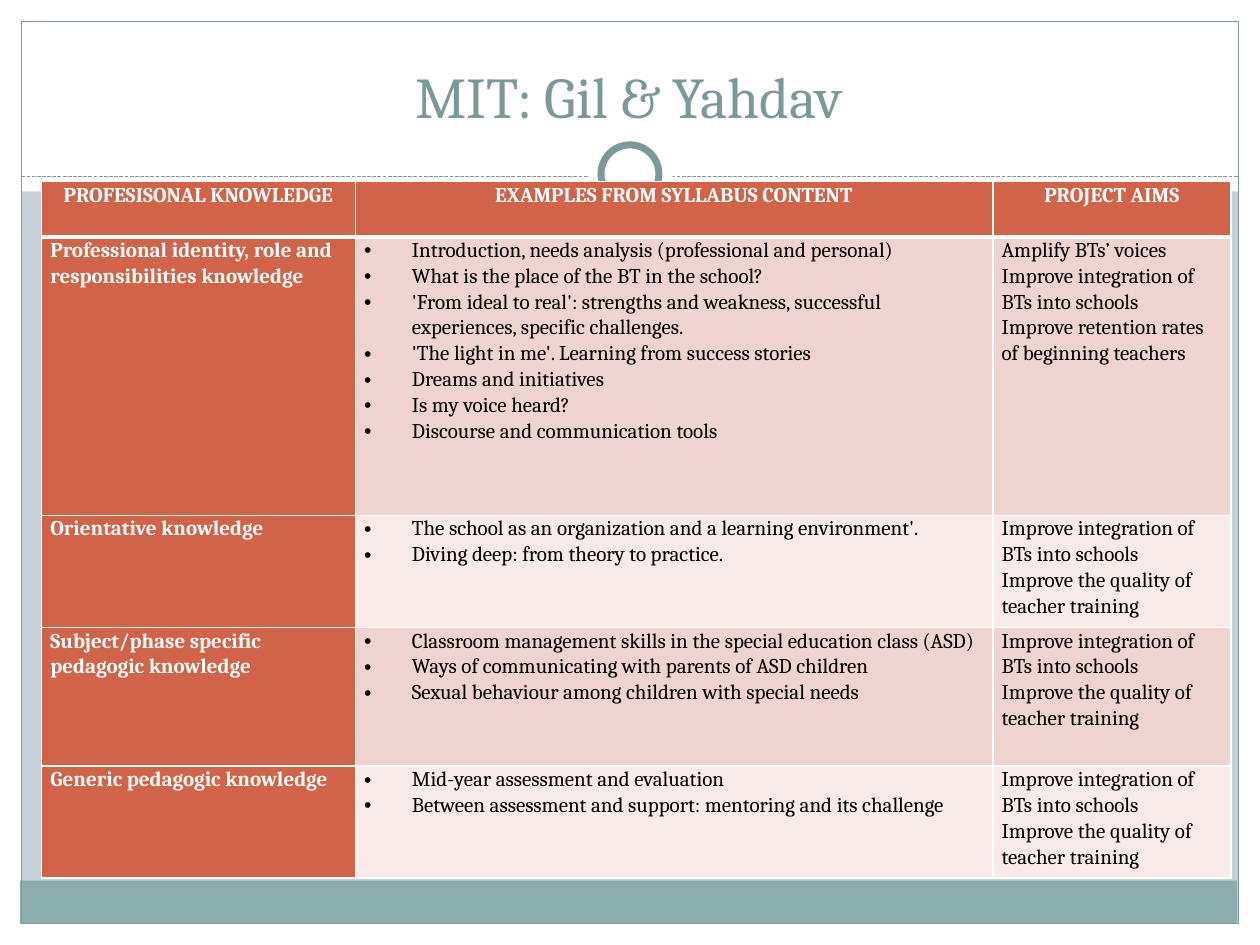
from typing import NamedTuple, Optional

from lxml import etree
from pptx import Presentation
from pptx.dml.color import RGBColor
from pptx.enum.dml import MSO_LINE
from pptx.enum.shapes import MSO_CONNECTOR, MSO_SHAPE
from pptx.enum.text import MSO_ANCHOR, MSO_AUTO_SIZE, PP_ALIGN
from pptx.oxml.ns import qn
from pptx.util import Inches, Pt

RECTANGLE, OVAL = MSO_SHAPE.RECTANGLE, MSO_SHAPE.OVAL
STRAIGHT = MSO_CONNECTOR.STRAIGHT
DASHED = MSO_LINE.SQUARE_DOT
CENTER, LEFT = PP_ALIGN.CENTER, PP_ALIGN.LEFT

WHITE = RGBColor(0xFF, 0xFF, 0xFF)
BLACK = RGBColor(0x00, 0x00, 0x00)
BACKDROP = RGBColor(0xC5, 0xD1, 0xD7)
FOOTER_TEAL = RGBColor(0x8C, 0xAD, 0xAE)
TEAL = RGBColor(0x7C, 0x99, 0x9A)
ORANGE = RGBColor(0xD1, 0x63, 0x49)
ROW_TINTS = (RGBColor(0xEE, 0xD3, 0xD0), RGBColor(0xF7, 0xEA, 0xE9))
FONT = "Cambria"
BULLET_INDENT = Inches(0.38)


class Decoration(NamedTuple):
    kind: MSO_SHAPE
    left: float
    top: float
    width: float
    height: float
    fill: Optional[RGBColor] = None
    line_width: float = 0


class KnowledgeArea(NamedTuple):
    name: str
    examples: list[str]
    aims: list[str]
    height: float


DECORATIONS = [
    Decoration(RECTANGLE, 0, 7.33, 10, 0.17, WHITE),
    Decoration(RECTANGLE, 0, 0, 10, 1.52, WHITE),
    Decoration(RECTANGLE, 0, 0, 0.17, 7.5, WHITE),
    Decoration(RECTANGLE, 9.83, 0, 0.17, 7.5, WHITE),
    Decoration(RECTANGLE, 0.16, 6.99, 9.66, 0.34, FOOTER_TEAL),
    Decoration(RECTANGLE, 0.17, 0.17, 9.66, 7.16, None, 0.75),
]
RING = [
    Decoration(OVAL, 4.67, 1.05, 0.67, 0.67, WHITE),
    Decoration(OVAL, 4.77, 1.15, 0.46, 0.46, WHITE, 4),
]

HEADINGS = ["PROFESISONAL KNOWLEDGE", "EXAMPLES FROM SYLLABUS CONTENT", "PROJECT AIMS"]
HEADING_HEIGHT = 0.44
COLUMN_WIDTHS = [2.49, 5.06, 1.89]
INTEGRATION = "Improve integration of BTs into schools"
TRAINING_AIMS = [INTEGRATION, "Improve the quality of teacher training"]
AREAS = [
    KnowledgeArea(
        "Professional identity, role and responsibilities knowledge",
        [
            "Introduction, needs analysis (professional and personal)",
            "What is the place of the BT in the school?",
            "'From ideal to real': strengths and weakness, successful experiences, "
            "specific challenges.",
            "'The light in me'. Learning from success stories",
            "Dreams and initiatives",
            "Is my voice heard?",
            "Discourse and communication tools",
        ],
        ["Amplify BTs’ voices", INTEGRATION, "Improve retention rates of beginning teachers"],
        2.21,
    ),
    KnowledgeArea(
        "Orientative knowledge",
        [
            "The school as an organization and a learning environment'.",
            "Diving deep: from theory to practice.",
        ],
        TRAINING_AIMS,
        0.89,
    ),
    KnowledgeArea(
        "Subject/phase specific pedagogic knowledge",
        [
            "Classroom management skills in the special education class (ASD)",
            "Ways of communicating with parents of ASD children",
            "Sexual behaviour among children with special needs",
        ],
        TRAINING_AIMS,
        1.1,
    ),
    KnowledgeArea(
        "Generic pedagogic knowledge",
        [
            "Mid-year assessment and evaluation",
            "Between assessment and support: mentoring and its challenge",
        ],
        TRAINING_AIMS,
        0.89,
    ),
]


def draw_decoration(slide, item: Decoration) -> None:
    box = [Inches(v) for v in (item.left, item.top, item.width, item.height)]
    shape = slide.shapes.add_shape(item.kind, *box)
    shape.shadow.inherit = False
    if item.fill is None:
        shape.fill.background()
    else:
        shape.fill.solid()
        shape.fill.fore_color.rgb = item.fill
    if item.line_width:
        shape.line.color.rgb = TEAL
        shape.line.width = Pt(item.line_width)
    else:
        shape.line.fill.background()


def draw_divider(slide) -> None:
    divider = slide.shapes.add_connector(
        STRAIGHT, Inches(0.17), Inches(1.4), Inches(9.83), Inches(1.4))
    divider.line.color.rgb = TEAL
    divider.line.width = Pt(0.75)
    divider.line.dash_style = DASHED
    etree.SubElement(divider.element.spPr, qn("a:effectLst"))


def add_text(paragraph, text: str, size: float, color: RGBColor, bold: bool = False) -> None:
    run = paragraph.add_run()
    run.text = text
    run.font.name = FONT
    run.font.size = Pt(size)
    run.font.bold = bold
    run.font.color.rgb = color


def add_bullet(paragraph) -> None:
    properties = paragraph._p.get_or_add_pPr()
    properties.set("marL", str(BULLET_INDENT))
    properties.set("indent", str(-BULLET_INDENT))
    etree.SubElement(properties, qn("a:buFont")).set("typeface", "Arial")
    etree.SubElement(properties, qn("a:buChar")).set("char", "•")


def set_borders(cell, top: float, bottom: float) -> None:
    properties = cell._tc.get_or_add_tcPr()
    edges = [("lnL", 1), ("lnR", 1), ("lnT", top), ("lnB", bottom)]
    for position, (edge, width) in enumerate(edges):
        border = etree.Element(qn(f"a:{edge}"), w=str(Pt(width)))
        solid = etree.SubElement(border, qn("a:solidFill"))
        etree.SubElement(solid, qn("a:srgbClr")).set("val", str(WHITE))
        properties.insert(position, border)


def fill_cell(cell, lines: list[str], fill: RGBColor, color: RGBColor = BLACK,
              align: PP_ALIGN = LEFT, bulleted: bool = False) -> None:
    cell.fill.solid()
    cell.fill.fore_color.rgb = fill
    cell.margin_left = cell.margin_right = Inches(0.07)
    cell.margin_top = cell.margin_bottom = 0
    frame = cell.text_frame
    for index, line in enumerate(lines):
        paragraph = frame.add_paragraph() if index else frame.paragraphs[0]
        paragraph.alignment = align
        paragraph.line_spacing = 1.07
        if bulleted:
            add_bullet(paragraph)
        add_text(paragraph, line, 12, color, bold=color == WHITE)


def draw_knowledge_table(slide) -> None:
    heights = [HEADING_HEIGHT] + [area.height for area in AREAS]
    table = slide.shapes.add_table(
        len(heights), len(HEADINGS), Inches(0.33), Inches(1.44),
        Inches(sum(COLUMN_WIDTHS)), Inches(sum(heights))).table
    for column, width in zip(table.columns, COLUMN_WIDTHS):
        column.width = Inches(width)
    for row, height in zip(table.rows, heights):
        row.height = Inches(height)

    for column, heading in enumerate(HEADINGS):
        fill_cell(table.cell(0, column), [heading], ORANGE, WHITE, CENTER)
    for row, area in enumerate(AREAS, start=1):
        tint = ROW_TINTS[(row - 1) % 2]
        fill_cell(table.cell(row, 0), [area.name], ORANGE, WHITE)
        fill_cell(table.cell(row, 1), area.examples, tint, bulleted=True)
        fill_cell(table.cell(row, 2), area.aims, tint)

    # A thick rule separates the headings from the body
    for row in range(len(heights)):
        for column in range(len(HEADINGS)):
            set_borders(table.cell(row, column), 3 if row == 1 else 1, 3 if row == 0 else 1)


def place_title(slide) -> None:
    title = slide.shapes.title
    title.left, title.top = Inches(0.33), Inches(0.25)
    title.width, title.height = Inches(9.33), Inches(0.83)
    frame = title.text_frame
    frame.auto_size = MSO_AUTO_SIZE.NONE
    frame.word_wrap = True
    frame.vertical_anchor = MSO_ANCHOR.BOTTOM
    frame.paragraphs[0].alignment = CENTER
    add_text(frame.paragraphs[0], "MIT: Gil & Yahdav", 33, TEAL)
    # Bring the title in front of the white header band
    title.element.getparent().append(title.element)


def main() -> None:
    deck = Presentation()
    deck.slide_width, deck.slide_height = Inches(10), Inches(7.5)
    slide = deck.slides.add_slide(deck.slide_layouts[5])
    slide.background.fill.solid()
    slide.background.fill.fore_color.rgb = BACKDROP

    # Frame, divider and ring
    for item in DECORATIONS:
        draw_decoration(slide, item)
    draw_divider(slide)
    for item in RING:
        draw_decoration(slide, item)

    # Content
    place_title(slide)
    draw_knowledge_table(slide)
    deck.save("out.pptx")


if __name__ == "__main__":
    main()
